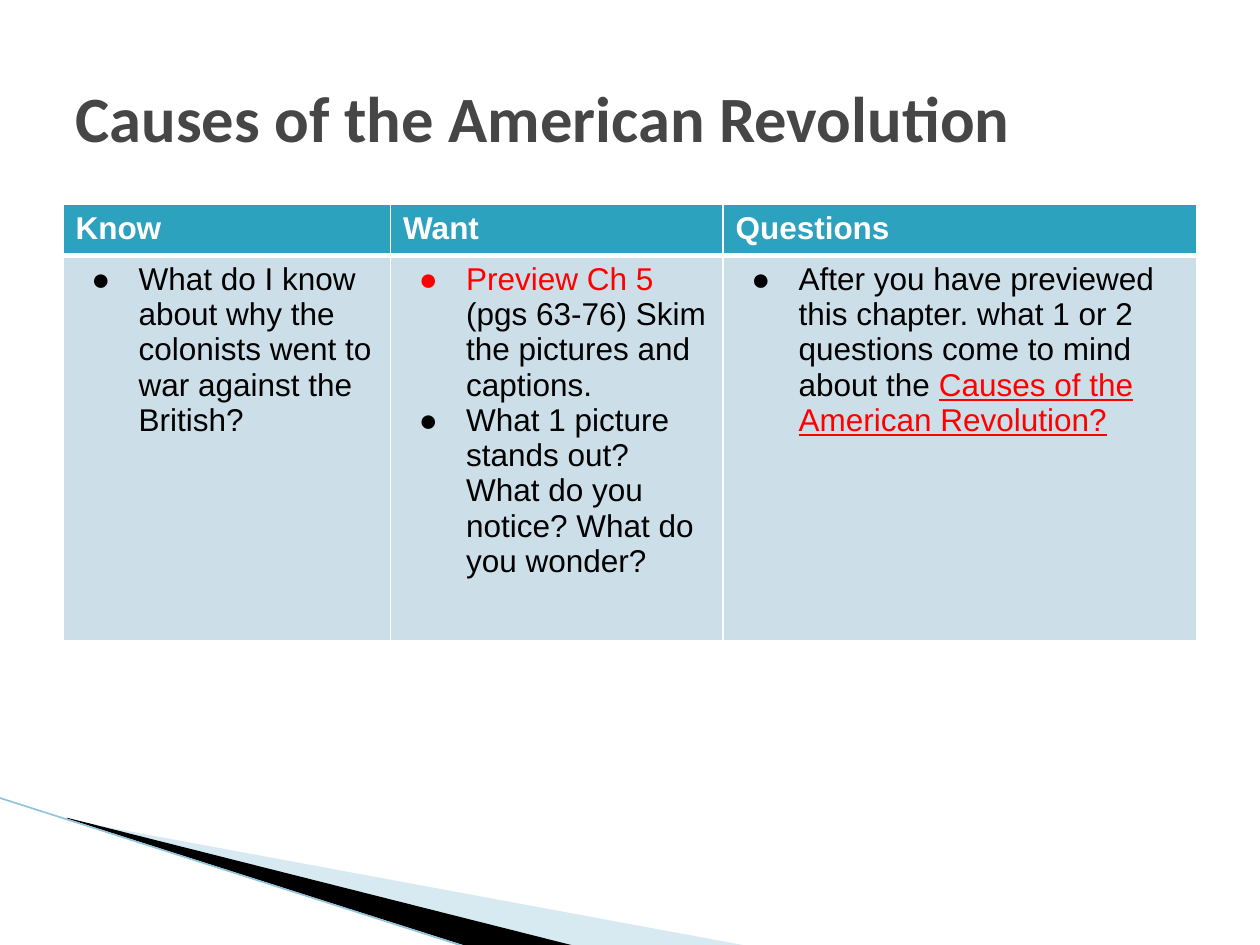
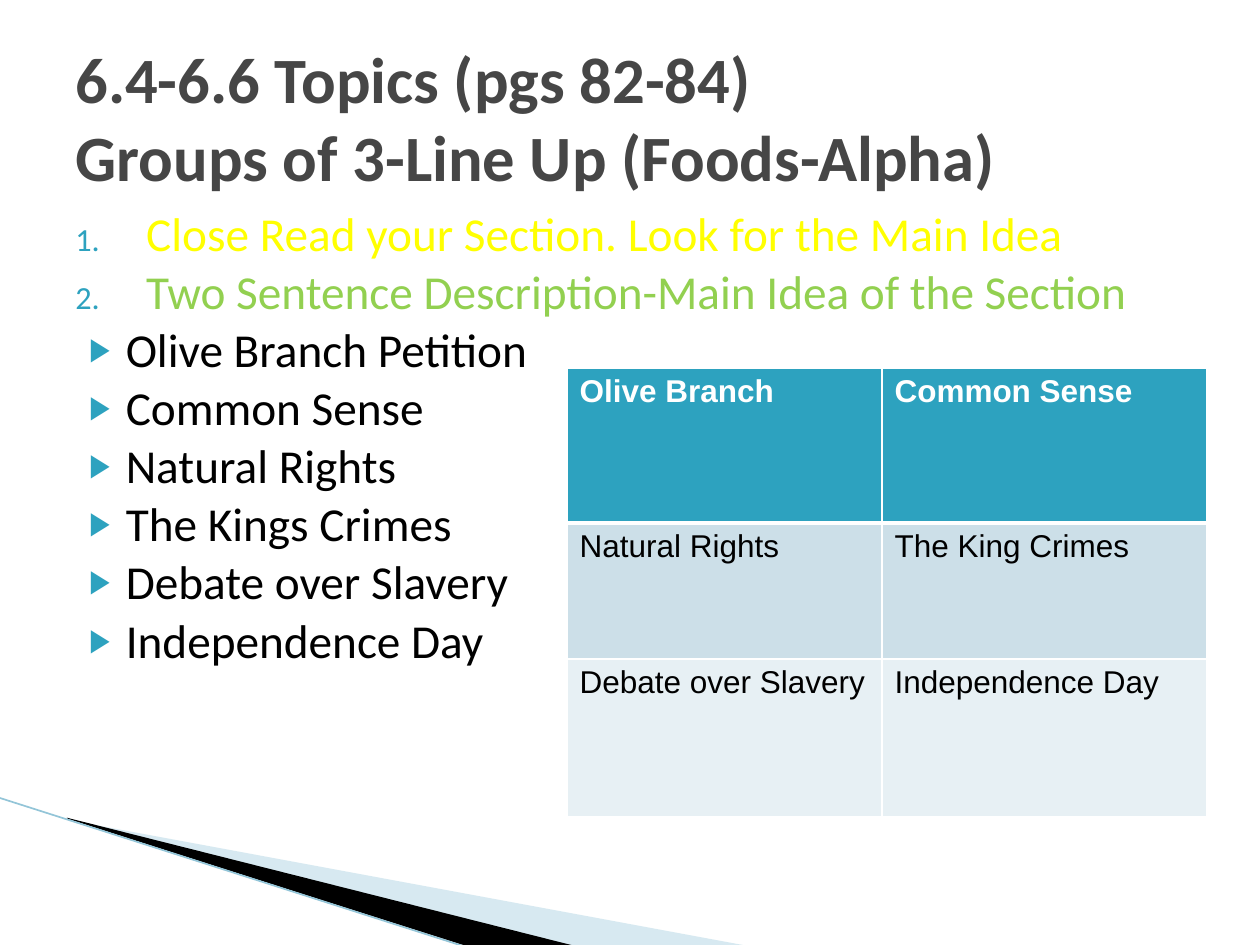
from dataclasses import dataclass

from lxml.etree import SubElement
from pptx import Presentation
from pptx.dml.color import RGBColor as RGB
from pptx.enum.shapes import MSO_CONNECTOR as CONNECTOR, MSO_SHAPE as SHAPE
from pptx.enum.text import MSO_ANCHOR as ANCHOR
from pptx.oxml.ns import qn
from pptx.util import Pt


@dataclass(frozen=True)
class Theme:
    white: str = "FFFFFF"
    black: str = "000000"
    red: str = "FF0000"
    yellow: str = "FFFF00"
    green: str = "92D050"
    title: str = "464646"
    teal: str = "2DA2BF"
    band_dark: str = "CCDFE8"
    band_light: str = "E7F0F4"
    sweep: str = "9CCADC"
    sweep_edge: str = "93C5D8"
    heading_font: str = "Calibri"
    table_font: str = "Arial"
    title_size: float = 36.9
    body_size: float = 27
    table_size: float = 18


theme = Theme()


def add_run(paragraph, text, font, size, color, bold=False, underline=None):
    run = paragraph.add_run()
    run.text = text
    run.font.name = font
    run.font.size = Pt(size)
    run.font.color.rgb = RGB.from_string(color)
    run.font.bold = bold
    run.font.underline = underline


def set_bullet(paragraph, left, hanging, char=None, color=None):
    props = paragraph._p.get_or_add_pPr()
    props.set("marL", str(Pt(left)))
    props.set("indent", str(-Pt(hanging)))
    if color:
        bullet_color = SubElement(props, qn("a:buClr"))
        SubElement(bullet_color, qn("a:srgbClr"), val=color)
        SubElement(props, qn("a:buSzPct"), val="68000")
    if char:
        SubElement(props, qn("a:buFont"), typeface=theme.table_font)
        SubElement(props, qn("a:buChar"), char=char)
    else:
        SubElement(props, qn("a:buFont"), typeface="+mj-lt")
        SubElement(props, qn("a:buAutoNum"), type="arabicPeriod")


steps = [
    ("Close Read your Section. Look for the Main Idea", theme.yellow),
    ("Two Sentence Description-Main Idea of the Section", theme.green),
]
topics = ["Olive Branch Petition", "Common Sense", "Natural Rights",
          "The Kings Crimes", "Debate over Slavery", "Independence Day"]

know = [[("What do I know about why the colonists went to war against the British?", theme.black)]]
want = [
    [("Preview Ch 5 ", theme.red), ("(pgs 63-76) Skim the pictures and captions.", theme.black)],
    [("What 1 picture stands out? What do you notice? What do you wonder?", theme.black)],
]
questions = [[
    ("After you have previewed this chapter. what 1 or 2 questions come to mind about the ", theme.black),
    ("Causes of the American Revolution?", theme.red, False, True),
]]

lessons = [
    dict(
        title=["Causes of the American Revolution"],
        outline=[],
        corner=(36, 116.8),
        columns=[187.2, 190, 270.4],
        rows=[29.2, 220],
        cells=[["Know", "Want", "Questions"], [know, want, questions]],
    ),
    dict(
        title=["6.4-6.6 Topics (pgs 82-84)", "Groups of 3-Line Up (Foods-Alpha)"],
        outline=steps + [(topic, theme.black) for topic in topics],
        corner=(324, 210.2),
        columns=[180, 185.8],
        rows=[88.6, 77.8, 90],
        cells=[["Olive Branch", "Common Sense"],
               ["Natural Rights", "The King Crimes"],
               ["Debate over Slavery", "Independence Day"]],
    ),
]

sweeps = [
    ([(39.6, 468.7), (428.4, 540.7), (328.3, 540.7), (39.6, 468)], theme.sweep, 40),
    ([(38.2, 467.3), (329, 540.7), (267.8, 541.4), (38.9, 468)], theme.black, 100),
]
row_fills = [theme.teal, theme.band_dark, theme.band_light]

deck = Presentation()
deck.slide_width, deck.slide_height = Pt(720), Pt(540)

for lesson in lessons:
    slide = deck.slides.add_slide(deck.slide_layouts[6])
    shapes = slide.shapes
    slide.background.fill.solid()
    slide.background.fill.fore_color.rgb = RGB.from_string(theme.white)

    for corners, color, opacity in sweeps:
        outline = [(Pt(x), Pt(y)) for x, y in corners]
        builder = shapes.build_freeform(*outline[0], scale=1.0)
        builder.add_line_segments(outline[1:], close=True)
        sweep = builder.convert_to_shape()
        sweep.shadow.inherit = False
        sweep.line.fill.background()
        sweep.fill.solid()
        sweep.fill.fore_color.rgb = RGB.from_string(color)
        if opacity < 100:
            tint = sweep._element.spPr.find(qn("a:solidFill"))[0]
            SubElement(tint, qn("a:alpha"), val=str(opacity * 1000))

    corner_mask = shapes.add_shape(SHAPE.RIGHT_TRIANGLE, Pt(-0.7), Pt(455.8), Pt(267.8), Pt(85))
    corner_mask.shadow.inherit = False
    corner_mask.line.fill.background()
    corner_mask.fill.solid()
    corner_mask.fill.fore_color.rgb = RGB.from_string(theme.white)

    edge = shapes.add_connector(CONNECTOR.STRAIGHT, Pt(-0.7), Pt(455.8), Pt(267.1), Pt(541.4))
    edge.line.color.rgb = RGB.from_string(theme.sweep_edge)
    edge.line.width = Pt(0.95)
    SubElement(edge._element.spPr, qn("a:effectLst"))

    if lesson["outline"]:
        body = shapes.add_textbox(Pt(36), Pt(116.8), Pt(648), Pt(356.4)).text_frame
        body.word_wrap = True
        for index, (text, color) in enumerate(lesson["outline"]):
            item = body.add_paragraph() if index else body.paragraphs[0]
            item.line_spacing = 0.9
            item.space_before = Pt(4 if index else 0)
            if index < len(steps):
                set_bullet(item, 40.5, 40.5, color=theme.teal)
            else:
                set_bullet(item, 28.8, 20.9, "▶", theme.teal)
            add_run(item, text, theme.heading_font, theme.body_size, color)

    heading = shapes.add_textbox(Pt(36), Pt(21.6), Pt(648), Pt(90)).text_frame
    heading.word_wrap = True
    heading.vertical_anchor = ANCHOR.MIDDLE
    for index, text in enumerate(lesson["title"]):
        if index:
            heading.paragraphs[0].add_line_break()
        add_run(heading.paragraphs[0], text, theme.heading_font, theme.title_size, theme.title, True)

    columns, rows = lesson["columns"], lesson["rows"]
    left, top = lesson["corner"]
    grid = shapes.add_table(len(rows), len(columns), Pt(left), Pt(top),
                            Pt(sum(columns)), Pt(sum(rows))).table
    for column, width in zip(grid.columns, columns):
        column.width = Pt(width)
    for row, height in zip(grid.rows, rows):
        row.height = Pt(height)

    for row_index, entries in enumerate(lesson["cells"]):
        is_header = row_index == 0
        for column_index, entry in enumerate(entries):
            cell = grid.cell(row_index, column_index)
            borders = cell._tc.get_or_add_tcPr()
            for side in "LRTB":
                thick = (is_header and side == "B") or (row_index == 1 and side == "T")
                border = SubElement(borders, qn(f"a:ln{side}"), w=str(Pt(3 if thick else 1)))
                SubElement(SubElement(border, qn("a:solidFill")), qn("a:srgbClr"), val=theme.white)
            cell.fill.solid()
            cell.fill.fore_color.rgb = RGB.from_string(row_fills[row_index])

            bulleted = isinstance(entry, list)
            text_color = theme.white if is_header else theme.black
            paragraphs = entry if bulleted else [[(entry, text_color, is_header)]]
            for index, runs in enumerate(paragraphs):
                frame = cell.text_frame
                paragraph = frame.add_paragraph() if index else frame.paragraphs[0]
                if bulleted:
                    set_bullet(paragraph, 36, 27, "●")
                for text, *style in runs:
                    add_run(paragraph, text, theme.table_font, theme.table_size, *style)

deck.save("out.pptx")
